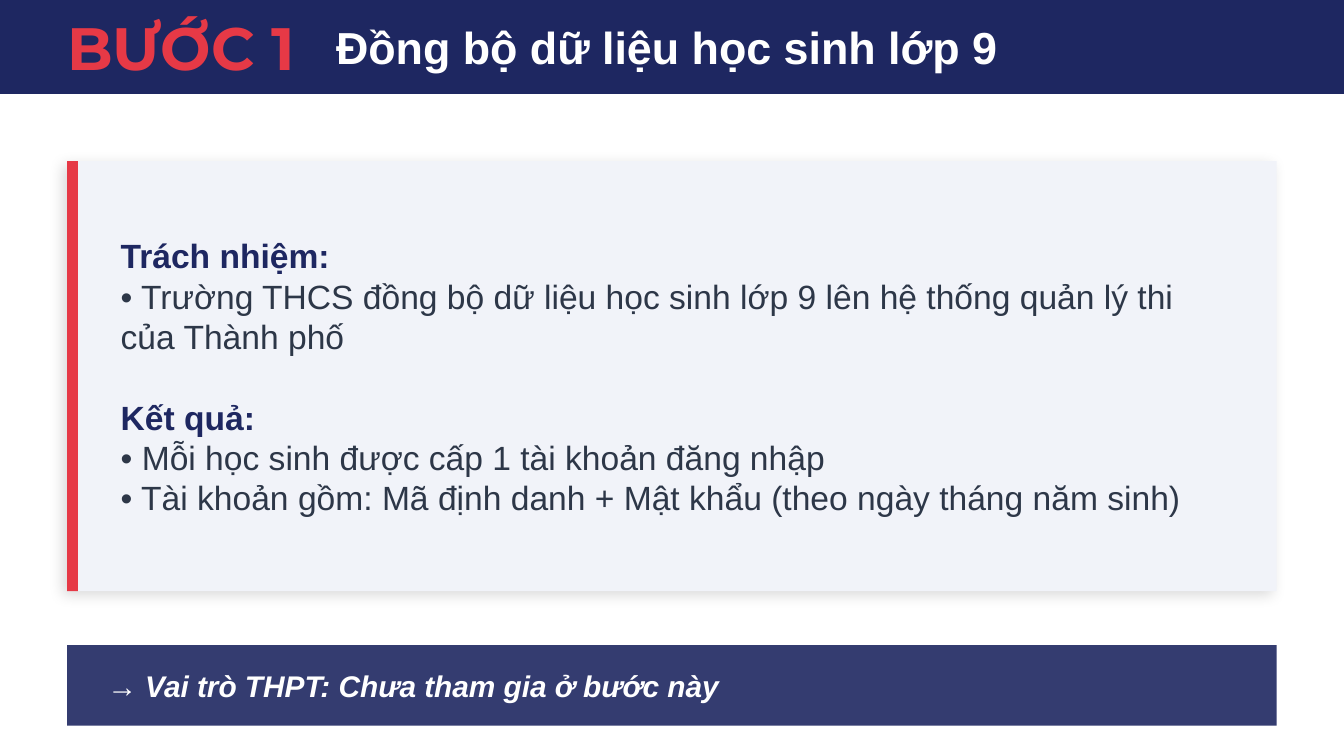
from lxml import etree
from pptx import Presentation
from pptx.dml.color import RGBColor
from pptx.enum.shapes import MSO_SHAPE
from pptx.enum.text import MSO_ANCHOR, MSO_AUTO_SIZE, PP_ALIGN
from pptx.oxml.ns import qn
from pptx.util import Inches, Pt

RECT = MSO_SHAPE.RECTANGLE
MIDDLE = MSO_ANCHOR.MIDDLE
FIXED = MSO_AUTO_SIZE.NONE
LEFT = PP_ALIGN.LEFT

WIDE = Inches(10)
HIGH = WIDE * 9 // 16
CELL = WIDE // 100
COLORS = {
    "navy": "1E2761",
    "red": "E63946",
    "white": "FFFFFF",
    "pale": "F1F3F9",
    "slate": "2D3748",
    "black": "000000",
}
STEP = {"name": "Montserrat", "size": Pt(32), "bold": True, "color": "red"}
TITLE = {"name": "Arial", "size": Pt(24), "bold": True, "color": "white"}
HEAD = {"name": "Arial", "size": Pt(18), "bold": True, "color": "navy"}
BODY = {**HEAD, "bold": False, "color": "slate"}
NOTE = {**TITLE, "size": Pt(16), "italic": True}


class Deck:
    def __init__(self):
        self.file = Presentation()
        self.file.slide_width, self.file.slide_height = WIDE, HIGH
        self.slide = self.file.slides.add_slide(self.file.slide_layouts[5])

    def cells(self, *spans):
        return [round(span * CELL) for span in spans]

    def tint(self, parent, name, share):
        color = etree.SubElement(parent, qn("a:srgbClr"), val=COLORS[name])
        etree.SubElement(color, qn("a:alpha"), val=str(share * 1000))

    def panel(self, spot, color, alpha=100):
        shape = self.slide.shapes.add_shape(RECT, *self.cells(*spot))
        shape.shadow.inherit = False
        shape.line.fill.background()
        shape.fill.solid()
        shape.fill.fore_color.rgb = RGBColor.from_string(COLORS[color])
        if alpha < 100:
            fill = shape.element.spPr.find(qn("a:solidFill"))
            fill.clear()
            self.tint(fill, color, alpha)
        return shape

    def shade(self, shape):
        effects = shape.element.spPr.find(qn("a:effectLst"))
        outer = etree.SubElement(
            effects, qn("a:outerShdw"), blurRad=str(Pt(8)), dist=str(Pt(3)),
            dir=str(135 * 60000), algn="bl", rotWithShape="0")
        self.tint(outer, "black", 15)

    def fill_in(self, shape, lines, inset=True):
        frame = shape.text_frame
        form = {"word_wrap": True, "auto_size": FIXED, "vertical_anchor": MIDDLE}
        if not inset:
            form |= dict.fromkeys(
                ("margin_left", "margin_top", "margin_right", "margin_bottom"), 0)
        for key, value in form.items():
            setattr(frame, key, value)
        for row, (words, style, gap) in enumerate(lines):
            para = frame.paragraphs[0] if row == 0 else frame.add_paragraph()
            para.alignment = LEFT
            para.space_before = Pt(gap)
            run = para.add_run()
            run.text = words
            for key, value in style.items():
                if key == "color":
                    run.font.color.rgb = RGBColor.from_string(COLORS[value])
                else:
                    setattr(run.font, key, value)

    def text(self, spot, lines, inset=True):
        box = self.slide.shapes.add_textbox(*self.cells(*spot))
        self.fill_in(box, lines, inset)

    def title(self, spot, words):
        shape = self.slide.shapes.title
        shape.left, shape.top, shape.width, shape.height = self.cells(*spot)
        self.fill_in(shape, [(words, TITLE, 0)], inset=False)
        shape.element.getparent().append(shape.element)


def main():
    deck = Deck()
    deck.panel((0, 0, 100, 7), "navy")
    deck.text((5, 1, 20, 5), [("BƯỚC 1", STEP, 0)], inset=False)
    deck.title((25, 1.5, 70, 4), "Đồng bộ dữ liệu học sinh lớp 9")

    card = deck.panel((5, 12, 90, 32), "pale")
    deck.shade(card)
    deck.panel((5, 12, 0.8, 32), "red")
    deck.text((8, 15, 84, 26), [
        ("Trách nhiệm:", HEAD, 0),
        ("• Trường THCS đồng bộ dữ liệu học sinh lớp 9 lên hệ thống "
         "quản lý thi của Thành phố", BODY, 0),
        ("Kết quả:", HEAD, 21.6),
        ("• Mỗi học sinh được cấp 1 tài khoản đăng nhập", BODY, 0),
        ("• Tài khoản gồm: Mã định danh + Mật khẩu "
         "(theo ngày tháng năm sinh)", BODY, 0),
    ])

    deck.panel((5, 48, 90, 6), "navy", alpha=90)
    deck.text((7, 49, 86, 4), [("→ Vai trò THPT: Chưa tham gia ở bước này", NOTE, 0)])
    deck.file.save("out.pptx")


if __name__ == "__main__":
    main()
